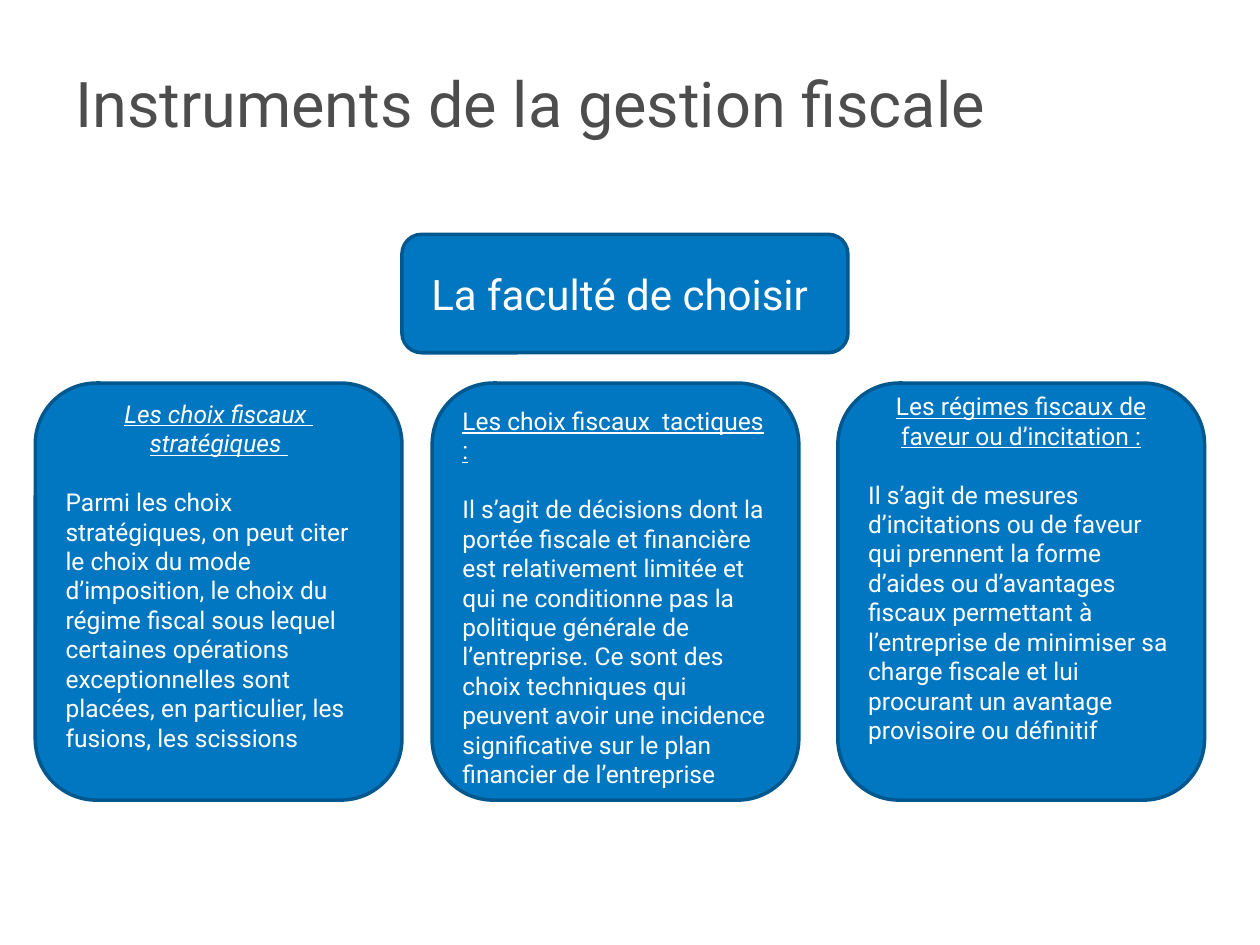
"""Build the slide on the instruments of tax management."""
from pptx import Presentation
from pptx.dml.color import RGBColor
from pptx.enum.shapes import MSO_SHAPE
from pptx.enum.text import MSO_ANCHOR, PP_ALIGN
from pptx.util import Inches, Pt

FONT = "Roboto"
BLUE = RGBColor(0x00, 0x77, 0xC0)
NAVY = RGBColor(0x00, 0x58, 0x8E)
GREY = RGBColor(0x4D, 0x4D, 0x4D)
WHITE = RGBColor(0xFF, 0xFF, 0xFF)

CARD_LEFTS = (0.28, 3.43, 6.65)
CARDS = [
    ("Les choix fiscaux  stratégiques ", PP_ALIGN.CENTER, True, 0.24,
     "Parmi les choix stratégiques, on peut citer le choix du mode d’imposition, "
     "le choix du régime fiscal sous lequel certaines opérations exceptionnelles "
     "sont placées, en particulier, les fusions, les scissions"),
    ("Les choix fiscaux  tactiques :", PP_ALIGN.LEFT, False, -0.05,
     "Il s’agit de décisions dont la portée fiscale et financière est relativement "
     "limitée et qui ne conditionne pas la politique générale de l’entreprise. "
     "Ce sont des choix techniques qui peuvent avoir une incidence significative "
     "sur le plan financier de l’entreprise"),
    ("Les régimes fiscaux de faveur ou d’incitation :", PP_ALIGN.CENTER, False, 0.3,
     "Il s’agit de mesures d’incitations ou de faveur qui prennent la forme d’aides "
     "ou d’avantages fiscaux permettant à l’entreprise de minimiser sa charge "
     "fiscale et lui procurant un avantage provisoire ou définitif"),
]


def write(p, text, size, color=WHITE, align=PP_ALIGN.LEFT):
    """Fill a paragraph with styled text."""
    p.text = text
    p.alignment = align
    p.font.name = FONT
    p.font.size = Pt(size)
    p.font.color.rgb = color


def add_title(s, text):
    """Add the slide title."""
    sp = s.shapes.add_textbox(Inches(0.5), Inches(0.42), Inches(8), Inches(0.78))
    tf = sp.text_frame
    tf.word_wrap = True
    tf.vertical_anchor = MSO_ANCHOR.MIDDLE
    write(tf.paragraphs[0], text, 36, GREY)


def add_box(s, left, top, width, height):
    """Add a blue rounded box and return its text frame."""
    sp = s.shapes.add_shape(MSO_SHAPE.ROUNDED_RECTANGLE, Inches(left), Inches(top),
                            Inches(width), Inches(height))
    sp.shadow.inherit = False
    sp.fill.solid()
    sp.fill.fore_color.rgb = BLUE
    sp.line.color.rgb = NAVY
    sp.line.width = Pt(2)
    tf = sp.text_frame
    tf.word_wrap = True
    tf.vertical_anchor = MSO_ANCHOR.MIDDLE
    return tf


def add_card(s, left, heading, align, italic, bottom, body):
    """Add a card with an underlined heading above its body."""
    tf = add_box(s, left, 3.04, 2.91, 3.31)
    tf.vertical_anchor = MSO_ANCHOR.BOTTOM
    tf.margin_top = 0
    tf.margin_bottom = Inches(bottom)
    p = tf.paragraphs[0]
    write(p, heading, 14, align=align)
    p.font.underline = True
    p.font.italic = italic
    p = tf.add_paragraph()
    write(p, body, 14)
    p.space_before = Pt(16.8)


def main():
    """Create and save the presentation."""
    prs = Presentation()
    prs.slide_width, prs.slide_height = Inches(10), Inches(7.5)
    s = prs.slides.add_slide(prs.slide_layouts[6])
    add_title(s, "Instruments de la gestion fiscale")
    tf = add_box(s, 3.19, 1.86, 3.54, 0.94)
    write(tf.paragraphs[0], "La faculté de choisir ", 24, align=PP_ALIGN.CENTER)
    for left, card in zip(CARD_LEFTS, CARDS):
        add_card(s, left, *card)
    prs.save("out.pptx")


if __name__ == "__main__":
    main()
